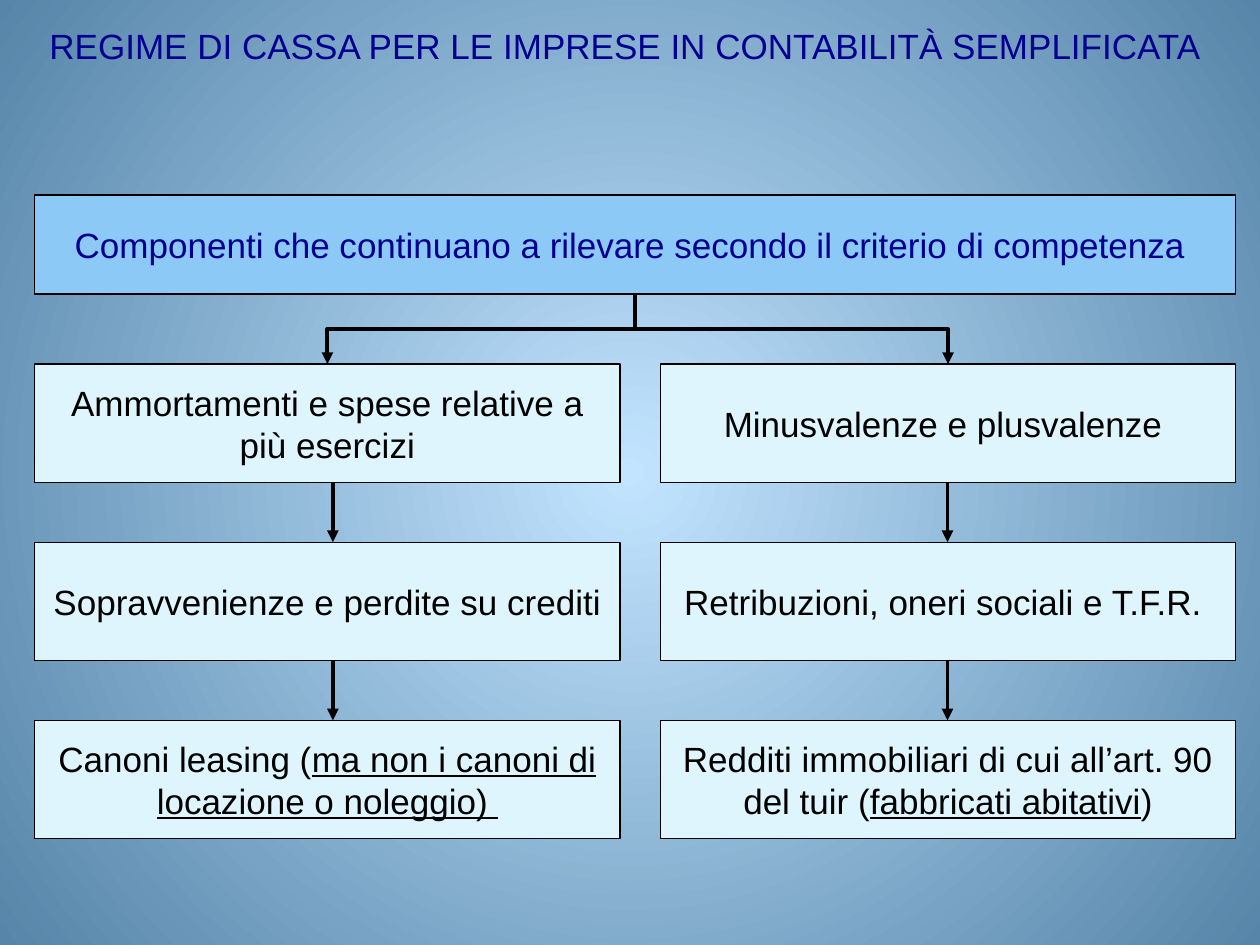
from lxml.etree import SubElement
from pptx import Presentation
from pptx.dml.color import RGBColor
from pptx.enum.shapes import MSO_CONNECTOR as Link, MSO_SHAPE as Shape
from pptx.enum.text import MSO_ANCHOR as Anchor, MSO_AUTO_SIZE as AutoSize, PP_ALIGN as Align
from pptx.oxml.ns import qn
from pptx.util import Cm, Pt

TITLE = "REGIME DI CASSA PER LE IMPRESE IN CONTABILITÀ SEMPLIFICATA"
HEADING = "Componenti che continuano a rilevare secondo il criterio di competenza "
COLUMNS = [
    {"left": 0.7, "width": 11.8, "arrow": 6.71, "items": [
        [("Ammortamenti e spese relative a più esercizi", False)],
        [("Sopravvenienze e perdite su crediti", False)],
        [("Canoni leasing (", False), ("ma non i canoni di locazione o noleggio) ", True)],
    ]},
    {"left": 13.31, "width": 11.6, "arrow": 19.1, "items": [
        [("Minusvalenze e plusvalenze ", False)],
        [("Retribuzioni, oneri sociali e T.F.R. ", False)],
        [("Redditi immobiliari di cui all’art. 90 del tuir (", False),
         ("fabbricati abitativi", True), (")", False)],
    ]},
]
COLORS = {"center": "C2E4FF", "edge": "5685A9", "heading": "8CC9F7",
          "item": "DFF5FD", "navy": "000090", "black": "000000"}
HEAD_LEFT, HEAD_TOP, HEAD_WIDTH, HEAD_HEIGHT = 0.7, 3.93, 24.21, 2.0
ROW_TOP, ROW_STEP, ROW_HEIGHT = 7.34, 3.59, 2.39


def color(name):
    return RGBColor.from_string(COLORS[name])


def paint_background(page):
    fill = page.background.fill
    fill.gradient()
    for stop, name in zip(fill.gradient_stops, ("center", "edge")):
        stop.color.rgb = color(name)
    gradient = page.background._cSld.find(".//" + qn("a:gradFill"))
    gradient.remove(gradient.find(qn("a:lin")))
    circle = SubElement(gradient, qn("a:path"), path="circle")
    SubElement(circle, qn("a:fillToRect"), l="50000", t="50000", r="50000", b="50000")


def write(frame, spans, ink):
    frame.vertical_anchor = Anchor.MIDDLE
    para = frame.paragraphs[0]
    para.alignment = Align.CENTER
    para.font.name, para.font.size = "Arial", Pt(20)
    para.font.color.rgb = color(ink)
    for text, underlined in spans:
        span = para.add_run()
        span.text = text
        if underlined:
            span.font.underline = True


def add_box(page, left, top, width, height, spans, fill, ink, wrap=True):
    box = page.shapes.add_shape(Shape.RECTANGLE, Cm(left), Cm(top), Cm(width), Cm(height))
    box.shadow.inherit = False
    box.fill.solid()
    box.fill.fore_color.rgb = color(fill)
    box.line.color.rgb = color("black")
    box.line.width = Pt(0.75)
    box.text_frame.word_wrap = wrap
    write(box.text_frame, spans, ink)


def add_arrow(page, kind, x1, y1, x2, y2):
    arrow = page.shapes.add_connector(kind, Cm(x1), Cm(y1), Cm(x2), Cm(y2))
    arrow.line.color.rgb = color("black")
    arrow.line.width = Pt(2.25)
    SubElement(arrow.line._get_or_add_ln(), qn("a:tailEnd"), type="triangle")
    SubElement(arrow._element.spPr, qn("a:effectLst"))
    return arrow


def add_branch(page, x1, y1, x2, y2):
    """Draw an elbow that leaves downwards, as a turned sideways elbow."""
    side = 1 if x2 > x1 else -1
    mid_x, mid_y = (x1 + x2) / 2, (y1 + y2) / 2
    across, down = side * (y2 - y1) / 2, abs(x2 - x1) / 2
    branch = add_arrow(page, Link.ELBOW, mid_x + across, mid_y - down,
                       mid_x - across, mid_y + down)
    turn = 270 if side > 0 else 90
    branch._element.spPr.find(qn("a:xfrm")).set("rot", str(turn * 60000))


def main():
    deck = Presentation()
    deck.slide_width, deck.slide_height = Cm(25.4), Cm(19.05)
    page = deck.slides.add_slide(deck.slide_layouts[5])
    paint_background(page)

    title = page.shapes.title
    title.left, title.top, title.width, title.height = Cm(0.3), Cm(0.33), Cm(24.61), Cm(1.19)
    title.text_frame.auto_size = AutoSize.NONE
    write(title.text_frame, [(TITLE, False)], "navy")

    add_box(page, HEAD_LEFT, HEAD_TOP, HEAD_WIDTH, HEAD_HEIGHT,
            [(HEADING, False)], "heading", "navy", wrap=False)
    for column in COLUMNS:
        left, width, x = column["left"], column["width"], column["arrow"]
        add_branch(page, HEAD_LEFT + HEAD_WIDTH / 2, HEAD_TOP + HEAD_HEIGHT,
                   left + width / 2, ROW_TOP)
        for row, spans in enumerate(column["items"]):
            top = ROW_TOP + row * ROW_STEP
            add_box(page, left, top, width, ROW_HEIGHT, spans, "item", "black")
            if row:
                add_arrow(page, Link.STRAIGHT, x, top - ROW_STEP + ROW_HEIGHT, x, top)
    deck.save("out.pptx")


if __name__ == "__main__":
    main()
